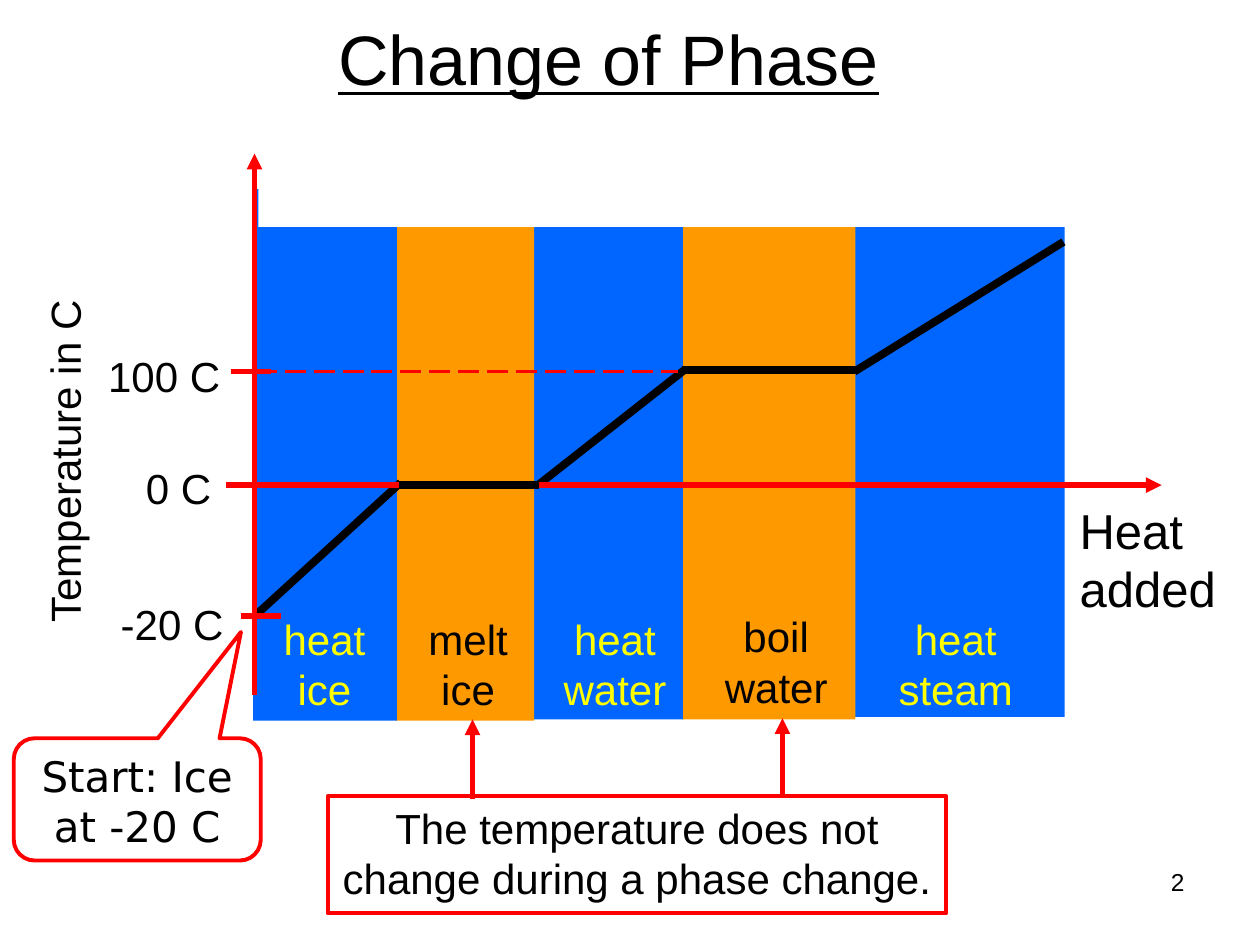
from dataclasses import dataclass

from lxml.etree import SubElement
from pptx import Presentation
from pptx.dml.color import RGBColor as RGB
from pptx.enum.dml import MSO_LINE as Dash
from pptx.enum.shapes import MSO_CONNECTOR as Conn, MSO_SHAPE as Geom
from pptx.enum.text import MSO_ANCHOR as Anchor, PP_ALIGN as Align
from pptx.oxml.ns import qn
from pptx.util import Inches, Pt


@dataclass(frozen=True)
class Theme:
    font: str = "Arial"
    callout_font: str = "DejaVu Sans"
    ink: str = "000000"
    paper: str = "FFFFFF"
    red: str = "FF0000"
    blue: str = "0066FF"
    orange: str = "FF9900"
    yellow: str = "FFFF00"
    title: int = 40
    axis_title: int = 28
    body: int = 24
    number: int = 14
    curve: float = 4.5
    axis: float = 3
    frame: float = 2.25
    guide: float = 1.5


T = Theme()

# Grid: 10 columns by 7.5 rows
WIDTH, HEIGHT = Inches(10), Inches(7.5)
COL, ROW = WIDTH / 10, HEIGHT / 7.5

# Levels of the graph, in rows
BOILING, FREEZING, START = 2.95, 3.85, 4.89
AXIS_X = 2.02

# Phases: left, top, width, height of the band; left, top, width of the label
PHASES = [
    ((2.01, 1.5, 1.14, 4.22), (2.15, 4.82, 0.85), ("heat", "ice")),
    ((3.14, 1.45, 1.1, 4.27), (3.3, 4.82, 0.83), ("melt", "ice")),
    ((4.2, 1.51, 1.22, 4.2), (4.37, 4.82, 1.02), ("heat", "water")),
    ((5.42, 1.54, 1.37, 4.17), (5.65, 4.8, 1.02), ("boil", "water")),
    ((6.74, 1.52, 1.71, 4.17), (7.03, 4.82, 1.11), ("heat", "steam")),
]


def place(left, top, width, height):
    return int(left * COL), int(top * ROW), int(width * COL), int(height * ROW)


def write(sp, lines, size=T.body, color=T.ink, font=T.font,
          align=Align.LEFT, wrap=False, anchor=Anchor.TOP):
    """Fill a shape with one paragraph per line and return its runs."""
    tf = sp.text_frame
    tf.word_wrap = wrap
    tf.vertical_anchor = anchor
    runs = []
    for i, line in enumerate(lines):
        p = tf.add_paragraph() if i else tf.paragraphs[0]
        p.alignment = align
        r = p.add_run()
        r.text = line
        r.font.name, r.font.size = font, Pt(size)
        r.font.color.rgb = RGB.from_string(color)
        runs.append(r)
    return runs


def add_text(slide, box, lines, **style):
    sp = slide.shapes.add_textbox(*place(*box))
    write(sp, lines, **style)
    return sp


def add_block(slide, box, fill, line=None, geom=Geom.RECTANGLE):
    sp = slide.shapes.add_shape(geom, *place(*box))
    sp.shadow.inherit = False
    sp.fill.solid()
    sp.fill.fore_color.rgb = RGB.from_string(fill)
    if line:
        sp.line.color.rgb = RGB.from_string(line)
        sp.line.width = Pt(T.frame)
    else:
        sp.line.fill.background()
    return sp


def add_line(slide, start, end, color=T.red, width=T.axis, dash=None, arrow=None):
    """Draw a line; arrow is None, 'headEnd' (at start) or 'tailEnd' (at end)."""
    ends = [int(v * unit) for pt in (start, end) for v, unit in zip(pt, (COL, ROW))]
    ln = slide.shapes.add_connector(Conn.STRAIGHT, *ends)
    ln.line.color.rgb = RGB.from_string(color)
    ln.line.width = Pt(width)
    if dash:
        ln.line.dash_style = dash
    if arrow:
        SubElement(ln.line._get_or_add_ln(), qn("a:" + arrow), type="triangle")
    SubElement(ln._element.spPr, qn("a:effectLst"))


def add_title(slide, text):
    sp = slide.shapes.title
    sp.left, sp.top, sp.width, sp.height = place(0.42, 0, 8.82, 0.92)
    r, = write(sp, [text], size=T.title, align=Align.CENTER, wrap=True,
               anchor=Anchor.MIDDLE)
    r.font.underline = True


def add_bands(slide):
    for i in reversed(range(len(PHASES))):
        add_block(slide, PHASES[i][0], T.orange if i % 2 else T.blue)


def add_curve(slide):
    segments = [
        ((2.01, 4.9), (3.18, 3.83)),
        ((4.27, FREEZING), (5.44, 2.93)),
        ((5.41, 2.94), (6.8, 2.94)),
        ((6.78, BOILING), (8.44, 1.92)),
    ]
    for start, end in segments:
        add_line(slide, start, end, T.ink, T.curve)


def add_axes(slide):
    add_line(slide, (AXIS_X, 1.22), (AXIS_X, 5.52), arrow="headEnd")
    add_line(slide, (1.79, FREEZING), (9.22, FREEZING), arrow="tailEnd")
    for left, level in ((1.83, BOILING), (1.91, START)):
        add_line(slide, (left, level), (left + 0.32, level))

    # Axis titles and scale
    add_text(slide, (8.47, 3.92, 1.29, 1.03), ["Heat", "added"], size=T.axis_title)
    sp = add_text(slide, (0.26, 2.34, 0.6, 2.7), ["Temperature in C"])
    sp.text_frame._txBody.bodyPr.set("vert", "vert270")
    for left, top, width, label in ((0.86, 4.7, 1.02, "-20 C"),
                                    (1.06, 3.62, 0.72, "0 C"),
                                    (0.76, 2.73, 1.09, "100 C")):
        add_text(slide, (left, top, width, 0.5), [label])


def add_phase_labels(slide):
    for i, (_, box, words) in enumerate(PHASES):
        add_text(slide, (*box, 0.9), words, align=Align.CENTER,
                 color=T.ink if i % 2 else T.yellow)


def add_notes(slide):
    # Conclusion
    sp = add_block(slide, (2.6, 6.32, 4.91, 0.93), T.paper, T.red)
    write(sp, ["The temperature does not", "change during a phase change."],
          align=Align.CENTER)
    # Melting plateau, above the heat axis
    add_line(slide, (3.17, FREEZING), (4.28, FREEZING), T.ink, T.curve)
    # Starting point
    sp = add_block(slide, (0.11, 5.86, 1.96, 0.97), T.paper, T.red,
                   Geom.ROUNDED_RECTANGULAR_CALLOUT)
    for i, value in enumerate((0.42, -1.37, 0.17)):
        sp.adjustments[i] = value
    write(sp, ["Start: Ice", "at -20 C"], font=T.callout_font,
          align=Align.CENTER, wrap=True)
    # Arrows from the conclusion to the two plateaus
    for x, top in ((6.21, 5.7), (3.75, 5.71)):
        add_line(slide, (x, top), (x, top + 0.63), arrow="headEnd")


def main():
    prs = Presentation()
    prs.slide_width, prs.slide_height = WIDTH, HEIGHT
    slide = prs.slides.add_slide(prs.slide_layouts[5])

    add_text(slide, (7.17, 6.83, 2.33, 0.52), ["2"], size=T.number,
             align=Align.RIGHT, wrap=True)
    add_title(slide, "Change of Phase")
    add_bands(slide)
    add_curve(slide)
    add_axes(slide)
    # Even upper edge for the bands
    add_block(slide, (2.05, 1.41, 6.88, 0.39), T.paper)
    add_line(slide, (2.03, BOILING), (5.38, BOILING), width=T.guide,
             dash=Dash.LONG_DASH)
    add_phase_labels(slide)
    add_notes(slide)
    prs.save("out.pptx")


if __name__ == "__main__":
    main()
